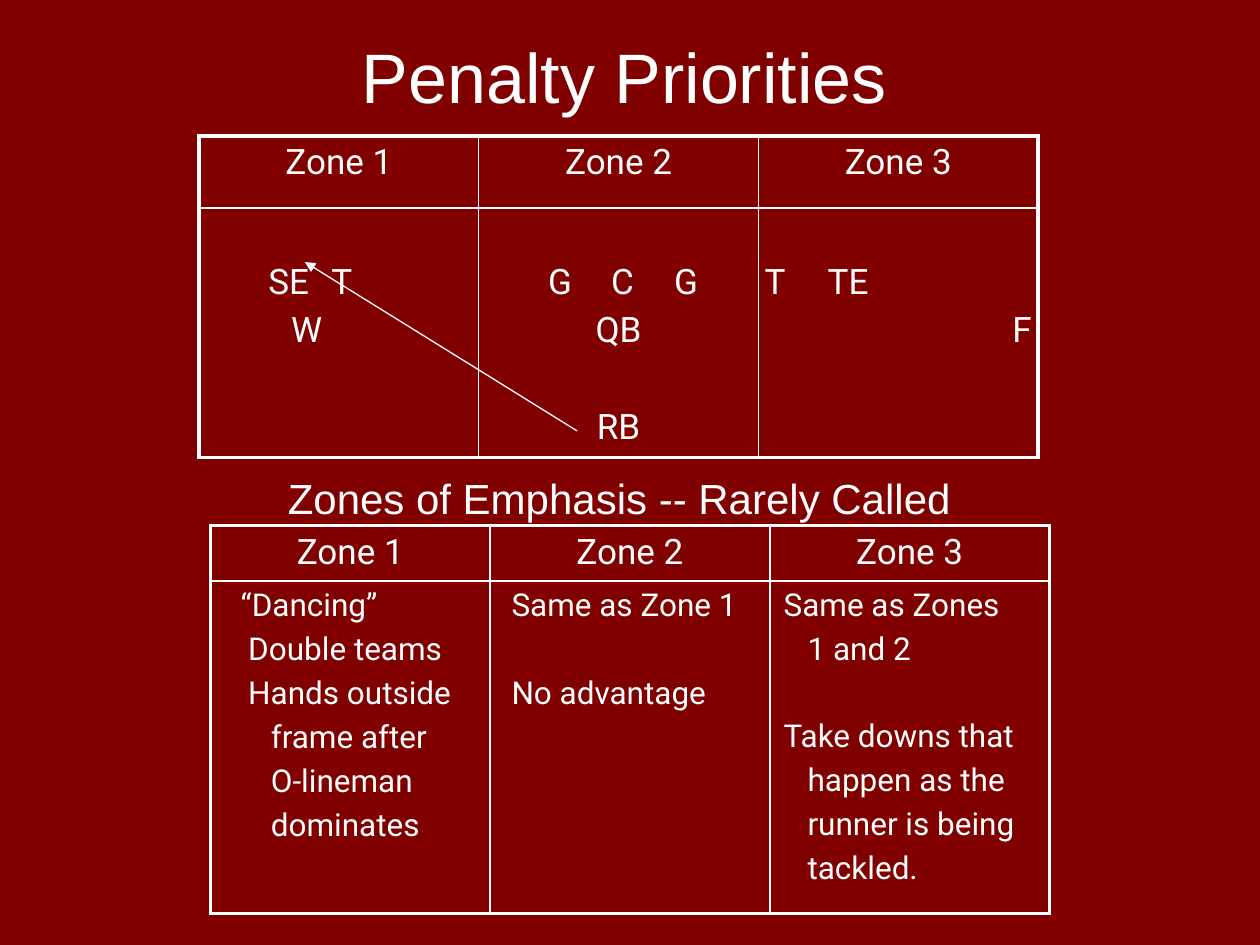
from lxml import etree
from pptx import Presentation
from pptx.dml.color import RGBColor
from pptx.enum import shapes, text
from pptx.oxml.ns import qn
from pptx.util import Inches, Pt

# Content
BACKGROUND, WHITE = "800000", "FFFFFF"
HEADINGS = ["Zone 1", "Zone 2", "Zone 3"]
LEFT, CENTER, RIGHT = text.PP_ALIGN.LEFT, text.PP_ALIGN.CENTER, text.PP_ALIGN.RIGHT
GAP, SKIP = 4, 29  # points before a line, and before one set apart

# Each line: text, then any of align, indent, tabs (inches), before (points)
FORMATION = [
    [("\tSE\tT", dict(tabs=(0.21, 1.08))), ("W", dict(indent=0.68))],
    [("\tG\tC\tG", dict(tabs=(0.5, 0.96, 1.43))), ("QB", dict(align=CENTER)),
     ("RB", dict(align=CENTER, before=32))],
    [("T\tTE", dict(tabs=(0.37,))), ("F", dict(align=RIGHT))],
]
RARELY_CALLED = [
    [("“Dancing”", dict(indent=0.19)), ("Double teams", dict(indent=0.25)),
     ("Hands outside", dict(indent=0.25)), ("frame after", dict(indent=0.43)),
     ("O-lineman", dict(indent=0.43)), ("dominates", dict(indent=0.43))],
    [("Same as Zone 1", dict(indent=0.12)),
     ("No advantage", dict(indent=0.12, before=SKIP))],
    [("Same as Zones", dict(indent=0.06)), ("1 and 2", dict(indent=0.25)),
     ("Take downs that", dict(indent=0.06, before=SKIP)),
     ("happen as the", dict(indent=0.25)), ("runner is being", dict(indent=0.25)),
     ("tackled.", dict(indent=0.25))],
]
# left, top, row heights, body text size, body top margin, body cells
TABLES = [
    (1.58, 1.08, (0.57, 1.97), 20, 0.43, FORMATION),
    (1.67, 4.17, (0.44, 2.64), 18, 0.05, RARELY_CALLED),
]
# text, left, top, width, height, size
TITLES = [
    ("Penalty Priorities", 0.58, 0.22, 8.75, 0.71, 40),
    ("Zones of Emphasis -- Rarely Called", 0.58, 3.7, 8.67, 0.48, 24),
]
RUN_PATH = (4.58, 3.42, 2.42, 2.08)
COLUMN, MARGIN = 2.22, 0.05
OUTER, INNER = 2.25, 1


def color(value):
    return RGBColor.from_string(value)


def set_margins(box, top=MARGIN):
    box.margin_left = box.margin_right = box.margin_bottom = Inches(MARGIN)
    box.margin_top = Inches(top)


def write(tf, lines, size, font):
    tf.text = "\n".join(line for line, _ in lines)
    for i, (p, (_, style)) in enumerate(zip(tf.paragraphs, lines)):
        p.alignment = style.get("align", LEFT)
        p.space_before = Pt(style.get("before", GAP) if i else 0)
        pPr = p._p.get_or_add_pPr()
        pPr.set("marL", str(Inches(style.get("indent", 0))))
        pPr.set("indent", "0")
        if "tabs" in style:
            stops = etree.SubElement(pPr, qn("a:tabLst"))
            for stop in style["tabs"]:
                etree.SubElement(stops, qn("a:tab"), pos=str(Inches(stop)), algn="l")
        for r in p.runs:
            r.font.size, r.font.name = Pt(size), font
            r.font.color.rgb = color(WHITE)


def add_borders(cell, outer_sides):
    tcPr = cell._tc.get_or_add_tcPr()
    for side in "LRTB":
        width = OUTER if side in outer_sides else INNER
        ln = etree.SubElement(tcPr, qn("a:ln" + side), w=str(Pt(width)))
        fill = etree.SubElement(ln, qn("a:solidFill"))
        etree.SubElement(fill, qn("a:srgbClr"), val=WHITE)


def add_zone_table(slide, left, top, heights, size, body_top, body):
    n = len(HEADINGS)
    table = slide.shapes.add_table(2, n, Inches(left), Inches(top),
                                   Inches(COLUMN * n), Inches(sum(heights))).table
    table.first_row = table.horz_banding = False
    for row, height in zip(table.rows, heights):
        row.height = Inches(height)
    header = [[(h, dict(align=CENTER))] for h in HEADINGS]
    rows = [(header, 20, MARGIN, "T"), (body, size, body_top, "B")]
    for r, (cells, points, margin, edge) in enumerate(rows):
        for c, lines in enumerate(cells):
            table.columns[c].width = Inches(COLUMN)
            cell = table.cell(r, c)
            set_margins(cell, margin)
            write(cell.text_frame, lines, points, "Roboto")
            add_borders(cell, edge + "L" * (c == 0) + "R" * (c == n - 1))
            cell.fill.background()


def main():
    prs = Presentation()
    prs.slide_width, prs.slide_height = Inches(10), Inches(7.5)
    slide = prs.slides.add_slide(prs.slide_layouts[6])
    slide.background.fill.solid()
    slide.background.fill.fore_color.rgb = color(BACKGROUND)

    # Title and subtitle
    for words, left, top, width, height, size in TITLES:
        tf = slide.shapes.add_textbox(Inches(left), Inches(top),
                                      Inches(width), Inches(height)).text_frame
        tf.word_wrap = True
        set_margins(tf)
        write(tf, [(words, dict(align=CENTER))], size, "Arial")

    # Zone tables
    for table in TABLES:
        add_zone_table(slide, *table)

    # Arrow for the path of the run
    arrow = slide.shapes.add_connector(shapes.MSO_CONNECTOR.STRAIGHT,
                                       *(Inches(v) for v in RUN_PATH))
    arrow.line.color.rgb = color(WHITE)
    arrow.line.width = Pt(0.75)
    etree.SubElement(arrow.line._get_or_add_ln(), qn("a:tailEnd"), type="triangle")
    etree.SubElement(arrow._element.spPr, qn("a:effectLst"))

    prs.save("out.pptx")


if __name__ == "__main__":
    main()
